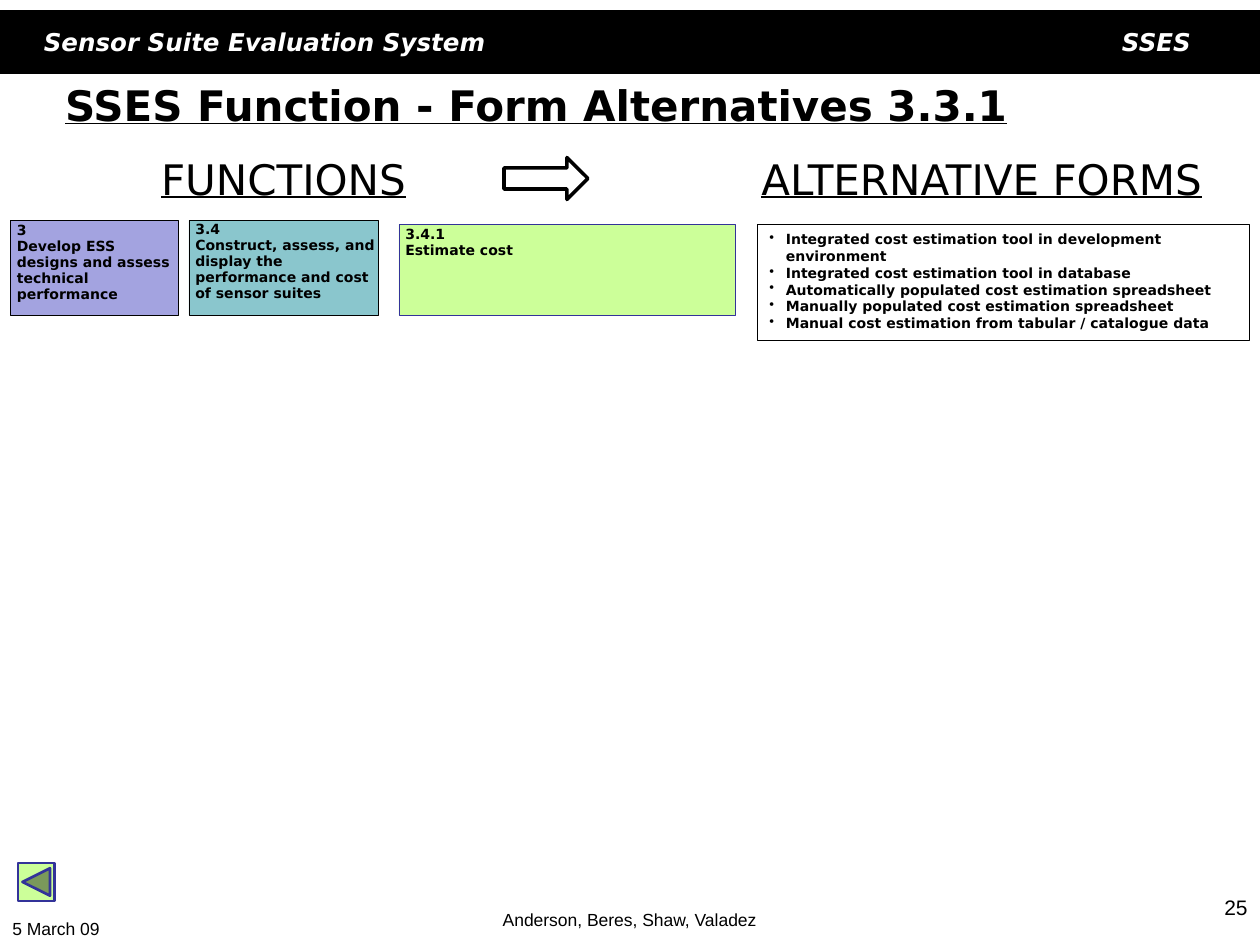
"""Build the function and form alternatives slide on a 120 by 90 grid."""
from lxml import etree
from pptx import Presentation
from pptx.dml.color import RGBColor
from pptx.enum.shapes import MSO_SHAPE
from pptx.enum.text import MSO_ANCHOR, PP_ALIGN
from pptx.oxml.ns import qn
from pptx.util import Inches, Pt

RECT, ARROW = MSO_SHAPE.RECTANGLE, MSO_SHAPE.RIGHT_ARROW
BACK = MSO_SHAPE.ACTION_BUTTON_BACK_OR_PREVIOUS
LEFT, MID, RIGHT = PP_ALIGN.LEFT, PP_ALIGN.CENTER, PP_ALIGN.RIGHT
TOP, CENTER, BOTTOM = MSO_ANCHOR.TOP, MSO_ANCHOR.MIDDLE, MSO_ANCHOR.BOTTOM
SANS, ARIAL = "DejaVu Sans", "Arial"
COLORS = {"black": "000000", "white": "FFFFFF", "violet": "A3A3E0",
          "teal": "8AC6CD", "lime": "CCFF99", "navy": "333399"}
UNIT = Inches(10) / 120
INSETS = (0.1, 0.05, 0.1, 0.05)

TITLE = "SSES Function - Form Alternatives 3.3.1"
BANNER = {"bold": True, "italic": True, "color": "white"}
HEAD = {"size": 24, "underline": True, "align": MID}
LABELS = [
    ("Sensor Suite Evaluation System", (3, 2, 66, 4), {"size": 14, **BANNER}),
    ("SSES", (90, 2, 24.6, 4), {"size": 14, "align": RIGHT, **BANNER}),
    ("FUNCTIONS", (5, 14, 44, 6), HEAD),
    ("ALTERNATIVE FORMS", (68, 14, 51, 6), HEAD),
    ("5 March 09", (0, 86.8, 18.8, 3.2), {"size": 10, "font": ARIAL}),
    ("Anderson, Beres, Shaw, Valadez", (37.8, 85, 44.3, 4.2),
     {"size": 10, "font": ARIAL, "align": MID, "anchor": BOTTOM}),
    ("25", (92, 84.6, 28, 5.4), {"size": 12, "font": ARIAL, "align": RIGHT}),
]
CARDS = [
    ("3\nDevelop ESS designs and assess technical performance",
     (1, 21, 16, 9), "violet", "black", 0.02),
    ("3.4\nConstruct, assess, and display the performance and cost of sensor suites",
     (18, 21, 18, 9), "teal", "black", 0.01),
    ("3.4.1\nEstimate cost", (38, 21.4, 32, 8.6), "lime", "navy", 0.02),
]
FORMS = [
    "Integrated cost estimation tool in development environment",
    "Integrated cost estimation tool in database",
    "Automatically populated cost estimation spreadsheet",
    "Manually populated cost estimation spreadsheet",
    "Manual cost estimation from tabular / catalogue data",
]


def rgb(name):
    return RGBColor.from_string(COLORS[name])


def grid(box):
    return [round(n * UNIT) for n in box]


def write(shape, text, size=8, font=SANS, color="black", align=LEFT, anchor=TOP,
          bold=False, italic=False, underline=False, space=None, insets=INSETS):
    frame = shape.text_frame
    frame.text = text
    frame.word_wrap = True
    frame.vertical_anchor = anchor
    (frame.margin_left, frame.margin_top,
     frame.margin_right, frame.margin_bottom) = map(Inches, insets)
    for para in frame.paragraphs:
        para.alignment = align
        para.line_spacing = space
        for run in para.runs:
            face = run.font
            face.size, face.name = Pt(size), font
            face.bold, face.italic, face.underline = bold, italic, underline
            face.color.rgb = rgb(color)


def draw(slide, kind, box, fill, line="black", width=0.25):
    shape = slide.shapes.add_shape(kind, *grid(box))
    shape.shadow.inherit = False
    if fill:
        shape.fill.solid()
        shape.fill.fore_color.rgb = rgb(fill)
    else:
        shape.fill.background()
    shape.line.color.rgb = rgb(line)
    shape.line.width = Pt(width)
    return shape


def bullet(para):
    props = para._p.get_or_add_pPr()
    props.set("marL", str(Inches(0.13)))
    props.set("indent", str(-Inches(0.13)))
    etree.SubElement(props, qn("a:buChar")).set("char", "•")


def main():
    deck = Presentation()
    deck.slide_width, deck.slide_height = grid((120, 90))
    slide = deck.slides.add_slide(deck.slide_layouts[5])
    draw(slide, RECT, (0, 1, 120, 6), "black", width=0.75)

    title = slide.shapes.title
    title.left, title.top, title.width, title.height = grid((5, 6, 108, 8))
    write(title, TITLE, size=24, bold=True, underline=True, anchor=CENTER)

    for text, box, style in LABELS:
        write(slide.shapes.add_textbox(*grid(box)), text, **style)

    for text, box, fill, line, pad in CARDS:
        write(draw(slide, RECT, box, fill, line), text, bold=True,
              space=0.95, insets=(0.05, pad, 0.02, pad))

    forms = draw(slide, RECT, (72.1, 21.4, 46.9, 11), None)
    write(forms, "\n".join(FORMS), bold=True)
    for para in forms.text_frame.paragraphs:
        bullet(para)

    draw(slide, ARROW, (48, 15, 8, 4), "white", width=2)
    draw(slide, BACK, (1.7, 82.2, 3.5, 3.6), "lime", "navy", 1.5)
    deck.save("out.pptx")


if __name__ == "__main__":
    main()
